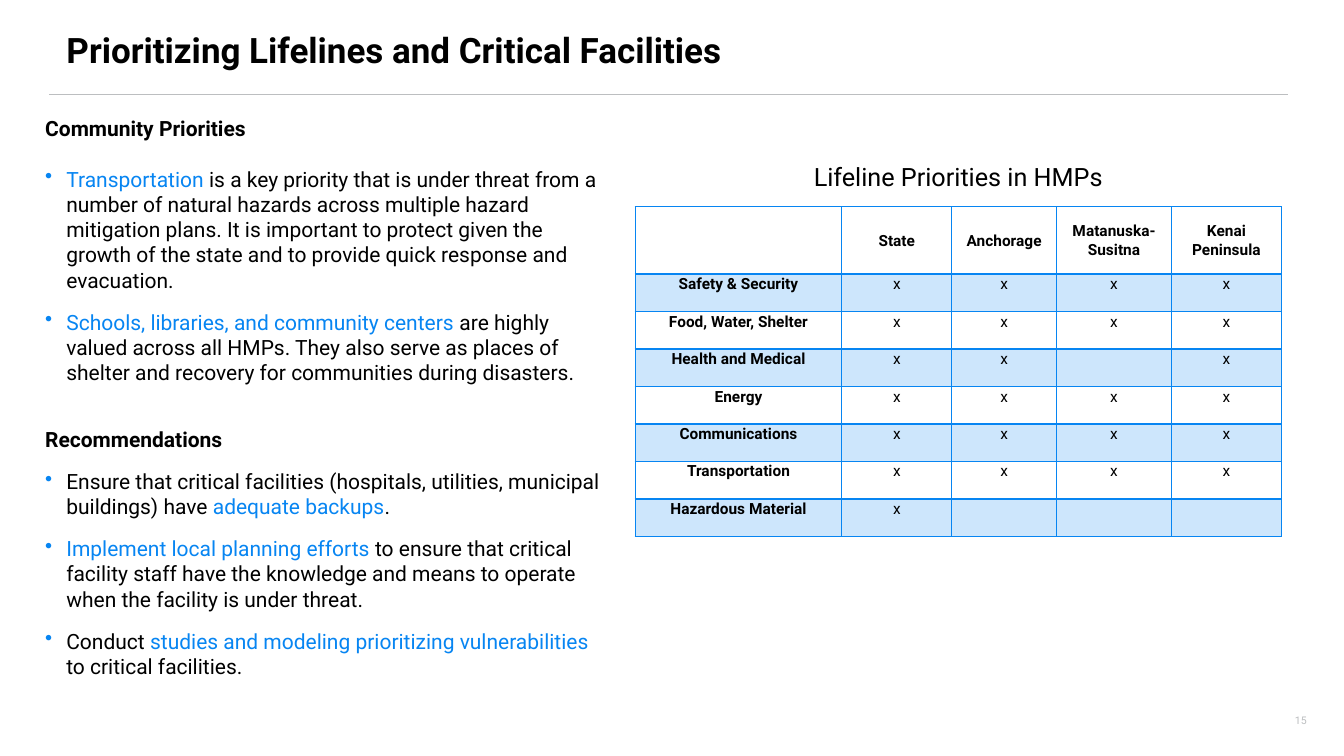
from lxml import etree
from pptx import Presentation
from pptx import util as u
from pptx.dml.color import RGBColor
from pptx.enum import shapes, text
from pptx.oxml import ns

COLORS = {"ink": "000000", "accent": "0785F2", "muted": "BCBEC0"}
FONT = "Roboto"
GRID = u.Inches(0.1)

PRIORITIES = [
    "*Transportation* is a key priority that is under threat from a number of "
    "natural hazards across multiple hazard mitigation plans. It is important to "
    "protect given the growth of the state and to provide quick response and evacuation.",
    "*Schools, libraries, and community centers* are highly valued across all HMPs. "
    "They also serve as places of shelter and recovery for communities during disasters.",
]
RECOMMENDATIONS = [
    "Ensure that critical facilities (hospitals, utilities, municipal buildings) "
    "have *adequate backups*.",
    "*Implement local planning efforts* to ensure that critical facility staff have "
    "the knowledge and means to operate when the facility is under threat.",
    "Conduct *studies and modeling prioritizing vulnerabilities* to critical facilities.",
]
PLANS = ["", "State", "Anchorage", "Matanuska-Susitna", "Kenai Peninsula"]
LIFELINES = {
    "Safety & Security": "xxxx",
    "Food, Water, Shelter": "xxxx",
    "Health and Medical": "xx x",
    "Energy": "xxxx",
    "Communications": "xxxx",
    "Transportation": "xxxx",
    "Hazardous Material": "x   ",
}
COLUMN_WIDTHS = [20.5, 10.9, 10.4, 11.4, 10.9]
HEADER_HEIGHT, ROW_HEIGHT = 6.7, 3.72


def cells(*counts):
    return [round(count * GRID) for count in counts]


def rgb(name):
    return RGBColor.from_string(COLORS[name])


def child(parent, tag, **attributes):
    return etree.SubElement(parent, ns.qn(tag), attributes)


def add_text(frame, content, size, color="ink", bold=False, align="LEFT",
             spacing=None, after=0, bullet=False):
    paragraph = frame.paragraphs[0]
    if paragraph.runs:
        paragraph = frame.add_paragraph()
    paragraph.alignment = getattr(text.PP_ALIGN, align)
    paragraph.space_after = u.Pt(after)
    if spacing:
        paragraph.line_spacing = spacing
    if bullet:
        properties = paragraph._p.get_or_add_pPr()
        indent = u.Inches(0.21)
        properties.set("marL", str(indent))
        properties.set("indent", str(-indent))
        child(child(properties, "a:buClr"), "a:srgbClr", val=COLORS["accent"])
        child(properties, "a:buChar", char="•")
    for index, part in enumerate(content.split("*")):
        if part:
            run = paragraph.add_run()
            run.text = part
            run.font.name, run.font.size, run.font.bold = FONT, u.Pt(size), bold
            run.font.color.rgb = rgb("accent" if index % 2 else color)


def add_frame(slide, left, top, width, height, anchor="TOP", side=0.1):
    frame = slide.shapes.add_textbox(*cells(left, top, width, height)).text_frame
    frame.word_wrap = True
    frame.vertical_anchor = getattr(text.MSO_ANCHOR, anchor)
    frame.margin_left = frame.margin_right = u.Inches(side)
    return frame


def add_rule(slide, left, right, top):
    rule = slide.shapes.add_connector(
        shapes.MSO_CONNECTOR.STRAIGHT, *cells(left, top, right, top))
    rule.line.color.rgb = rgb("muted")
    rule.line.width = u.Pt(0.5)
    child(rule._element.spPr, "a:effectLst")


def format_cell(cell, header, shaded):
    cell.margin_left = cell.margin_right = u.Inches(0.07)
    cell.margin_top = cell.margin_bottom = 0
    cell.vertical_anchor = text.MSO_ANCHOR.MIDDLE if header else text.MSO_ANCHOR.TOP
    properties = cell._tc.get_or_add_tcPr()
    for side in "LRTB":
        points = 2 if header and side == "B" else 1
        border = child(properties, f"a:ln{side}", w=str(u.Pt(points)))
        child(child(border, "a:solidFill"), "a:srgbClr", val=COLORS["accent"])
    if shaded:
        cell.fill.solid()
        cell.fill.fore_color.rgb = rgb("accent")
        tint = properties.find(f"{ns.qn('a:solidFill')}/{ns.qn('a:srgbClr')}")
        child(tint, "a:alpha", val="20000")
    else:
        cell.fill.background()


def add_lifeline_table(slide, left, top):
    rows = [PLANS] + [[name, *marks] for name, marks in LIFELINES.items()]
    heights = [HEADER_HEIGHT] + [ROW_HEIGHT] * len(LIFELINES)
    table = slide.shapes.add_table(
        len(rows), len(PLANS),
        *cells(left, top, sum(COLUMN_WIDTHS), sum(heights))).table
    table.first_row = table.horz_banding = False
    for column, width in zip(table.columns, cells(*COLUMN_WIDTHS)):
        column.width = width
    for row, height in zip(table.rows, cells(*heights)):
        row.height = height
    for r, entries in enumerate(rows):
        for c, entry in enumerate(entries):
            cell = table.cell(r, c)
            format_cell(cell, header=r == 0, shaded=r % 2 == 1)
            add_text(cell.text_frame, entry.strip(), 11, bold=r == 0 or c == 0,
                     align="CENTER", spacing=1.07)


def add_section(frame, heading, points, heading_after, last_after=12):
    add_text(frame, heading, 15, bold=True, after=heading_after)
    for point in points:
        after = last_after if point == points[-1] else 12
        add_text(frame, point, 15, after=after, bullet=True)


def main():
    deck = Presentation()
    deck.slide_width, deck.slide_height = u.Inches(13.33), u.Inches(7.5)
    slide = deck.slides.add_slide(deck.slide_layouts[6])

    add_rule(slide, 4.9, 127.7, 9.4)
    title = add_frame(slide, 6.6, 1, 117, 8.3, anchor="MIDDLE", side=0)
    add_text(title, "Prioritizing Lifelines and Critical Facilities", 25,
             bold=True, spacing=0.9)
    page = add_frame(slide, 104.2, 69.5, 26.4, 4, anchor="MIDDLE")
    add_text(page, "15", 7.5, color="muted", align="RIGHT")

    add_lifeline_table(slide, 63, 20.5)
    caption = add_frame(slide, 63, 15.5, 64.1, 4)
    add_text(caption, "Lifeline Priorities in HMPs", 18, align="CENTER")

    body = add_frame(slide, 3.5, 11, 58, 54.8)
    add_section(body, "Community Priorities", PRIORITIES, 18, last_after=30)
    add_section(body, "Recommendations", RECOMMENDATIONS, 12)

    deck.save("out.pptx")


if __name__ == "__main__":
    main()
